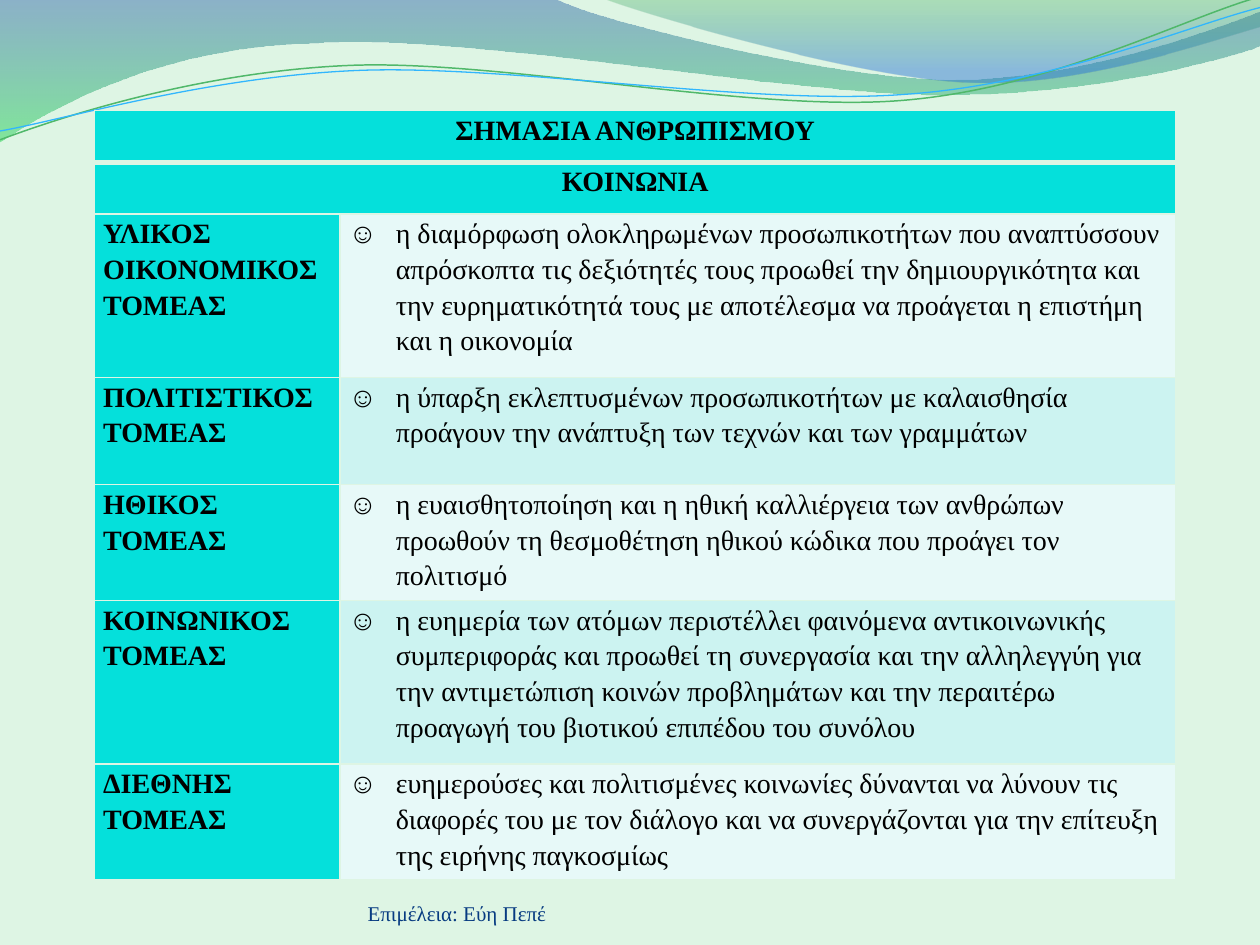
from pptx import Presentation as Deck
from pptx.dml.color import RGBColor as Rgb
from pptx.enum.text import MSO_VERTICAL_ANCHOR as Anchor, PP_PARAGRAPH_ALIGNMENT as Align
from pptx.oxml.ns import qn
from pptx.util import Cm, Pt
from lxml.etree import SubElement

COLORS = {
    "page": "DEF5E4", "header": "05E0DB", "light": "E7F9F8", "band": "CCF3F1",
    "text": "000000", "credit": "073B81", "blue": "2960A7", "green": "35DA5E",
    "leaf": "36A752", "sky": "2472D3", "green_line": "50B86A", "blue_line": "31B6FD",
}
FONT = "Times New Roman"
HUNDREDTH_INCH = Cm(2.54) / 100

LEFT_WAVE = [(0, 0), (440, -1), (476, 17, 664, 63, 758, 63), (853, 63, 958, 26, 1000, 9),
             (1001, 36), (983, 44, 870, 76, 746, 75), (622, 75, 382, 28, 257, 34),
             (129, 36, 46, 83, -1, 113)]
RIGHT_WAVE = [(479, -1), (509, 11, 682, 62, 769, 65), (856, 69, 961, 32, 1000, 21), (1000, 0)]
GREEN_CURVE = [(0, 111), (48, 93, 158, 57, 277, 52), (395, 47, 593, 89, 713, 80),
               (833, 71, 938, 15, 998, -2)]
BLUE_CURVE = [(0, 104), (47, 96, 164, 61, 283, 56), (403, 51, 597, 84, 717, 75),
              (836, 67, 941, 21, 1000, 6)]

TITLES = ["ΣΗΜΑΣΙΑ ΑΝΘΡΩΠΙΣΜΟΥ", "ΚΟΙΝΩΝΙΑ"]
SECTORS = [
    ("ΥΛΙΚΟΣ ΟΙΚΟΝΟΜΙΚΟΣ ΤΟΜΕΑΣ",
     "η διαμόρφωση ολοκληρωμένων προσωπικοτήτων που αναπτύσσουν απρόσκοπτα τις δεξιότητές "
     "τους προωθεί την δημιουργικότητα και την ευρηματικότητά τους με αποτέλεσμα να "
     "προάγεται η επιστήμη και η οικονομία"),
    ("ΠΟΛΙΤΙΣΤΙΚΟΣ ΤΟΜΕΑΣ",
     "η ύπαρξη εκλεπτυσμένων προσωπικοτήτων με καλαισθησία προάγουν την ανάπτυξη των "
     "τεχνών και των γραμμάτων"),
    ("ΗΘΙΚΟΣ ΤΟΜΕΑΣ",
     "η ευαισθητοποίηση και η ηθική καλλιέργεια των ανθρώπων προωθούν τη θεσμοθέτηση "
     "ηθικού κώδικα που προάγει τον πολιτισμό"),
    ("ΚΟΙΝΩΝΙΚΟΣ ΤΟΜΕΑΣ",
     "η ευημερία των ατόμων περιστέλλει φαινόμενα αντικοινωνικής συμπεριφοράς και προωθεί "
     "τη συνεργασία και την αλληλεγγύη για την αντιμετώπιση κοινών προβλημάτων και την "
     "περαιτέρω προαγωγή του βιοτικού επιπέδου του συνόλου"),
    ("ΔΙΕΘΝΗΣ ΤΟΜΕΑΣ",
     "ευημερούσες και πολιτισμένες κοινωνίες δύνανται να λύνουν τις διαφορές του με τον "
     "διάλογο και να συνεργάζονται για την επίτευξη της ειρήνης παγκοσμίως"),
]
COLUMN_WIDTHS = [4.95, 16.86]
ROW_HEIGHTS = [1.04, 1.04, 3.3, 2.16, 2.16, 3.3, 2.16]


def color(name):
    return Rgb.from_string(COLORS[name])


def write_text(frame, text, size=16, ink="text", bold=False, align=Align.LEFT,
               spacing=1.0, bullet=None):
    para = frame.paragraphs[0]
    para.alignment = align
    para.line_spacing = spacing
    if bullet:
        props = para._p.get_or_add_pPr()
        props.set("marL", str(Cm(0.95)))
        props.set("indent", str(Cm(-0.95)))
        SubElement(props, qn("a:buFont"), typeface=FONT)
        SubElement(props, qn("a:buChar"), char=bullet)
    span = para.add_run()
    span.text = text
    span.font.name = FONT
    span.font.size = Pt(size)
    span.font.bold = bold
    span.font.color.rgb = color(ink)


class Painter:
    def __init__(self, page):
        self.page = page
        page.background.fill.solid()
        page.background.fill.fore_color.rgb = color("page")

    def outline(self, start, segments, close):
        nodes = [segment[i:i + 2] for segment in segments for i in range(0, len(segment), 2)]
        builder = self.page.shapes.build_freeform(*start, scale=HUNDREDTH_INCH)
        builder.add_line_segments(nodes, close=close)
        shape = builder.convert_to_shape()
        shape.shadow.inherit = False
        steps = iter(list(shape._element.spPr.iter(qn("a:lnTo"))))
        for segment in segments:
            first = next(steps)
            if len(segment) == 6:
                bend = first.makeelement(qn("a:cubicBezTo"))
                first.addprevious(bend)
                for step in (first, next(steps), next(steps)):
                    bend.append(step[0])
                    step.getparent().remove(step)
        return shape

    def wave(self, segments, stops):
        shape = self.outline(segments[0], segments[1:], True)
        shape.line.fill.background()
        shape.fill.gradient()
        shape.fill.gradient_angle = 270
        for stop, (position, name, _) in zip(shape.fill.gradient_stops, stops):
            stop.position = position
            stop.color.rgb = color(name)
        tints = shape._element.spPr.find(qn("a:gradFill")).iter(qn("a:srgbClr"))
        for tint, (_, _, opacity) in zip(tints, stops):
            SubElement(tint, qn("a:alpha"), val=str(opacity * 1000))

    def curve(self, segments, name, width):
        shape = self.outline(segments[0], segments[1:], False)
        shape.fill.background()
        shape.line.color.rgb = color(name)
        shape.line.width = Pt(width)

    def label(self, text, left, top, width, height, **style):
        box = self.page.shapes.add_textbox(Cm(left), Cm(top), Cm(width), Cm(height))
        frame = box.text_frame
        frame.word_wrap = True
        frame.vertical_anchor = Anchor.BOTTOM
        frame.margin_left = frame.margin_right = frame.margin_top = frame.margin_bottom = 0
        write_text(frame, text, **style)

    def cell(self, cell, fill, widths):
        cell.margin_left = cell.margin_right = Cm(0.18)
        cell.margin_top = cell.margin_bottom = 0
        props = cell._tc.get_or_add_tcPr()
        for side in "LRTB":
            border = SubElement(props, qn(f"a:ln{side}"), w=str(Pt(widths.get(side, 1))))
            SubElement(SubElement(border, qn("a:solidFill")), qn("a:srgbClr"),
                       val=COLORS["page"])
        cell.fill.solid()
        cell.fill.fore_color.rgb = color(fill)

    def table(self, left, top):
        table = self.page.shapes.add_table(
            len(ROW_HEIGHTS), len(COLUMN_WIDTHS), Cm(left), Cm(top),
            Cm(sum(COLUMN_WIDTHS)), Cm(sum(ROW_HEIGHTS))).table
        for column, width in zip(table.columns, COLUMN_WIDTHS):
            column.width = Cm(width)
        for row, height in zip(table.rows, ROW_HEIGHTS):
            row.height = Cm(height)
        for index, title in enumerate(TITLES):
            for cell in table.rows[index].cells:
                self.cell(cell, "header", {"T": 3} if index else {"B": 3})
            table.cell(index, 0).merge(table.cell(index, 1))
            write_text(table.cell(index, 0).text_frame, title, bold=True,
                       align=Align.CENTER, spacing=1.15)
        for index, (sector, effect) in enumerate(SECTORS):
            name, detail = table.rows[index + len(TITLES)].cells
            self.cell(name, "header", {})
            self.cell(detail, "band" if index % 2 else "light", {})
            write_text(name.text_frame, sector, bold=True, spacing=1.15)
            write_text(detail.text_frame, effect, spacing=1.15, bullet="☺")


def main():
    deck = Deck()
    deck.slide_width, deck.slide_height = Cm(25.4), Cm(19.05)
    painter = Painter(deck.slides.add_slide(deck.slide_layouts[6]))
    painter.wave(LEFT_WAVE, [(0, "blue", 45), (1, "green", 55)])
    painter.wave(RIGHT_WAVE, [(0, "leaf", 30), (0.8, "sky", 45)])
    painter.curve(GREEN_CURVE, "green_line", 0.85)
    painter.curve(BLUE_CURVE, "blue_line", 0.75)
    painter.label("Επιμέλεια: Εύη Πεπέ", 7.41, 17.65, 9.32, 1.02, size=12, ink="credit")
    painter.table(1.9, 2.23)
    deck.save("out.pptx")


if __name__ == "__main__":
    main()
